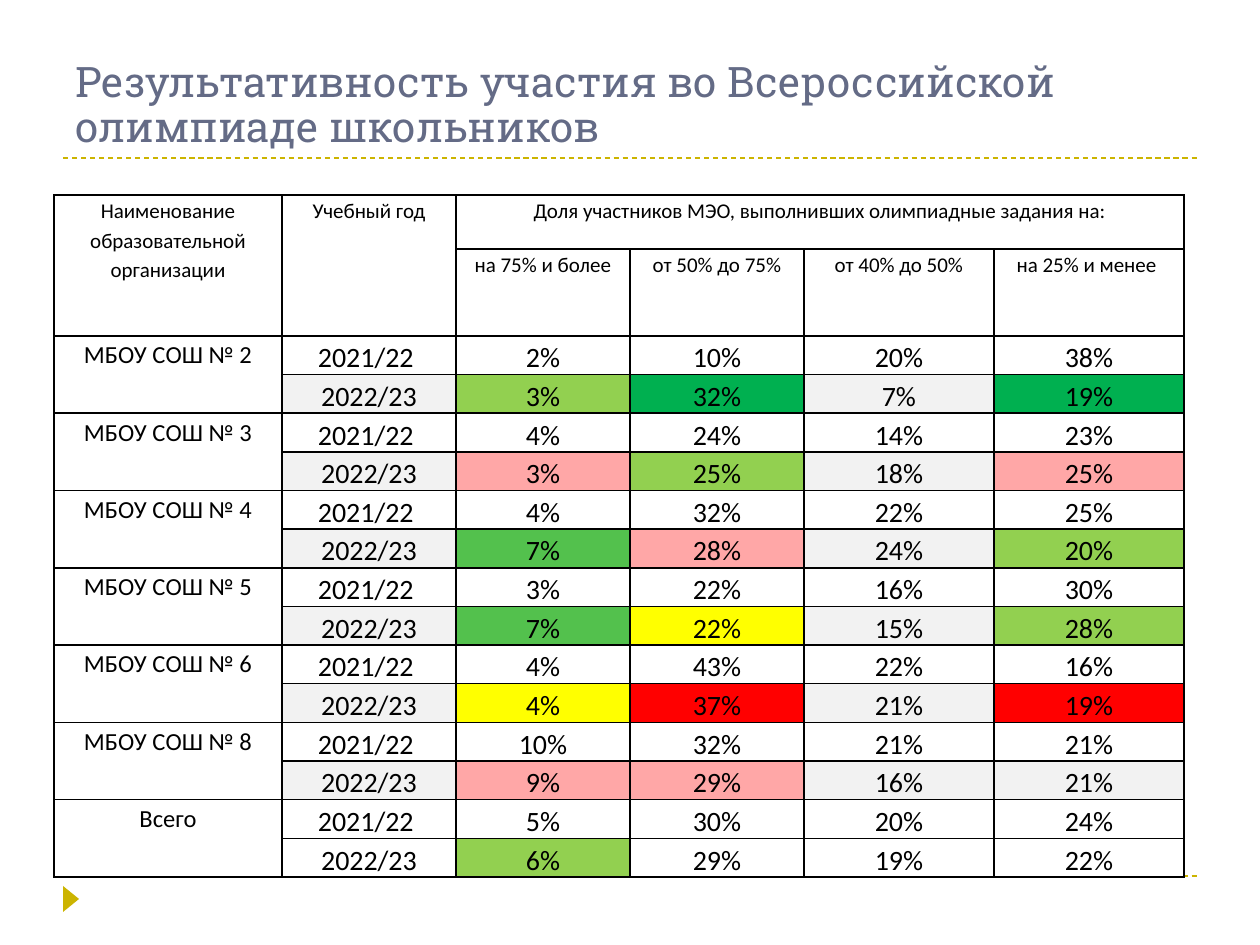
import pptx
import pptx.util
import pptx.dml.color
import pptx.enum.dml
import pptx.enum.shapes
import pptx.enum.text
import lxml.etree

NS = "http://schemas.openxmlformats.org/drawingml/2006/main"
GOLD, WHITE, GRAY = "CCB400", "FFFFFF", "F2F2F2"
LIME, LEAF, GREEN = "92D050", "53C14D", "00B050"
PINK, RED, YELLOW = "FFA7A7", "FF0000", "FFFF00"
COLS = [228, 174, 174, 174, 190, 190]
ROWS = [54, 54] + [26] * 14
BANDS = ["на 75% и более", "от 50% до 75%", "от 40% до 50%", "на 25% и менее "]
YEARS = ["2021/22 ", "2022/23"]
DATA = [
    ("МБОУ СОШ № 2", [2, 10, 20, 38], [3, 32, 7, 19], [GRAY, LIME, GREEN, GRAY, GREEN]),
    ("МБОУ СОШ № 3", [4, 24, 14, 23], [3, 25, 18, 25], [GRAY, PINK, LIME, GRAY, PINK]),
    ("МБОУ СОШ № 4", [4, 32, 22, 25], [7, 28, 24, 20], [GRAY, LEAF, PINK, GRAY, LIME]),
    ("МБОУ СОШ № 5", [3, 22, 16, 30], [7, 22, 15, 28], [GRAY, LEAF, YELLOW, GRAY, LIME]),
    ("МБОУ СОШ № 6", [4, 43, 22, 16], [4, 37, 21, 19], [GRAY, YELLOW, RED, GRAY, RED]),
    ("МБОУ СОШ № 8", [10, 32, 21, 21], [9, 29, 16, 21], [GRAY, PINK, PINK, GRAY, GRAY]),
    ("Всего", [5, 30, 20, 24], [6, 29, 19, 22], [WHITE, LIME, WHITE, WHITE, WHITE]),
]


def px(num):
    """Turn pixels into EMU."""
    return pptx.util.Emu(round(num * 914400 / 126))


def tint(code):
    """Turn a hex string into a colour."""
    return pptx.dml.color.RGBColor.from_string(code)


def write(frame, text, size, font, code, gap):
    """Put one run in the first paragraph and return that paragraph."""
    para = frame.paragraphs[0]
    para.line_spacing = gap
    run = para.add_run()
    run.text = text
    run.font.size = pptx.util.Pt(size)
    run.font.name = font
    run.font.color.rgb = tint(code)
    return para


def rule(slide, top):
    """Draw a dashed gold rule across the slide."""
    line = slide.shapes.add_connector(
        pptx.enum.shapes.MSO_CONNECTOR.STRAIGHT, px(63), px(top), px(1197), px(top))
    line.line.color.rgb = tint(GOLD)
    line.line.width = pptx.util.Pt(0.75)
    line.line.dash_style = pptx.enum.dml.MSO_LINE.DASH
    props = line._element.spPr
    lxml.etree.SubElement(props, f"{{{NS}}}effectLst")


def marker(slide):
    """Draw the gold triangle in the footer."""
    mark = slide.shapes.add_shape(
        pptx.enum.shapes.MSO_SHAPE.ISOSCELES_TRIANGLE, px(58), px(891), px(26), px(16))
    mark.rotation = 90
    mark.shadow.inherit = False
    mark.fill.solid()
    mark.fill.fore_color.rgb = tint(GOLD)
    mark.line.fill.background()


def title(slide, text):
    """Add the slide title."""
    frame = slide.shapes.add_textbox(px(63), px(32), px(1134), px(126)).text_frame
    frame.word_wrap = True
    frame.vertical_anchor = pptx.enum.text.MSO_ANCHOR.BOTTOM
    write(frame, text, 24, "Roboto Slab", "646B86", 0.9)


def border(cell):
    """Give a cell a thin black border on all sides."""
    props = cell._tc.get_or_add_tcPr()
    for spot, side in enumerate(("lnL", "lnR", "lnT", "lnB")):
        edge = lxml.etree.Element(f"{{{NS}}}{side}", w="12700")
        fill = lxml.etree.SubElement(edge, f"{{{NS}}}solidFill")
        lxml.etree.SubElement(fill, f"{{{NS}}}srgbClr", val="000000")
        props.insert(spot, edge)


def put(cell, text, size, fill=WHITE):
    """Fill a cell with centred text."""
    cell.fill.solid()
    cell.fill.fore_color.rgb = tint(fill)
    para = write(cell.text_frame, text, size, "Calibri", "000000", 1.15)
    para.alignment = pptx.enum.text.PP_ALIGN.CENTER


def head(grid):
    """Fill the two header rows."""
    put(grid.cell(0, 0), "Наименование образовательной организации", 12)
    put(grid.cell(0, 1), "Учебный год", 12)
    put(grid.cell(0, 2), "Доля участников МЭО, выполнивших олимпиадные задания на:", 12)
    for col in (0, 1):
        grid.cell(0, col).merge(grid.cell(1, col))
    grid.cell(0, 2).merge(grid.cell(0, 5))
    for col, band in enumerate(BANDS, 2):
        put(grid.cell(1, col), band, 12)


def school(grid, row, name, old, new, fills):
    """Fill the pair of rows that belongs to one school."""
    put(grid.cell(row, 0), name, 14)
    grid.cell(row, 0).merge(grid.cell(row + 1, 0))
    for step, (vals, hues) in enumerate(((old, [WHITE] * 5), (new, fills))):
        texts = [YEARS[step]] + [f"{val}%" for val in vals]
        for col, (text, hue) in enumerate(zip(texts, hues), 1):
            put(grid.cell(row + step, col), text, 16, hue)


def table(slide):
    """Add the table of results."""
    grid = slide.shapes.add_table(
        len(ROWS), len(COLS), px(54), px(195), px(sum(COLS)), px(sum(ROWS))).table
    for col, width in zip(grid.columns, COLS):
        col.width = px(width)
    for row, high in zip(grid.rows, ROWS):
        row.height = px(high)
    for cell in grid.iter_cells():
        cell.margin_left = cell.margin_right = px(9)
        cell.margin_top = cell.margin_bottom = 0
        border(cell)
    head(grid)
    for spot, entry in enumerate(DATA):
        school(grid, 2 + 2 * spot, *entry)


def main():
    """Build and save the slide."""
    deck = pptx.Presentation()
    deck.slide_width, deck.slide_height = px(1260), px(945)
    slide = deck.slides.add_slide(deck.slide_layouts[6])
    for top in (876, 158):
        rule(slide, top)
    marker(slide)
    title(slide, "Результативность участия во Всероссийской олимпиаде школьников")
    table(slide)
    deck.save("out.pptx")


if __name__ == "__main__":
    main()
